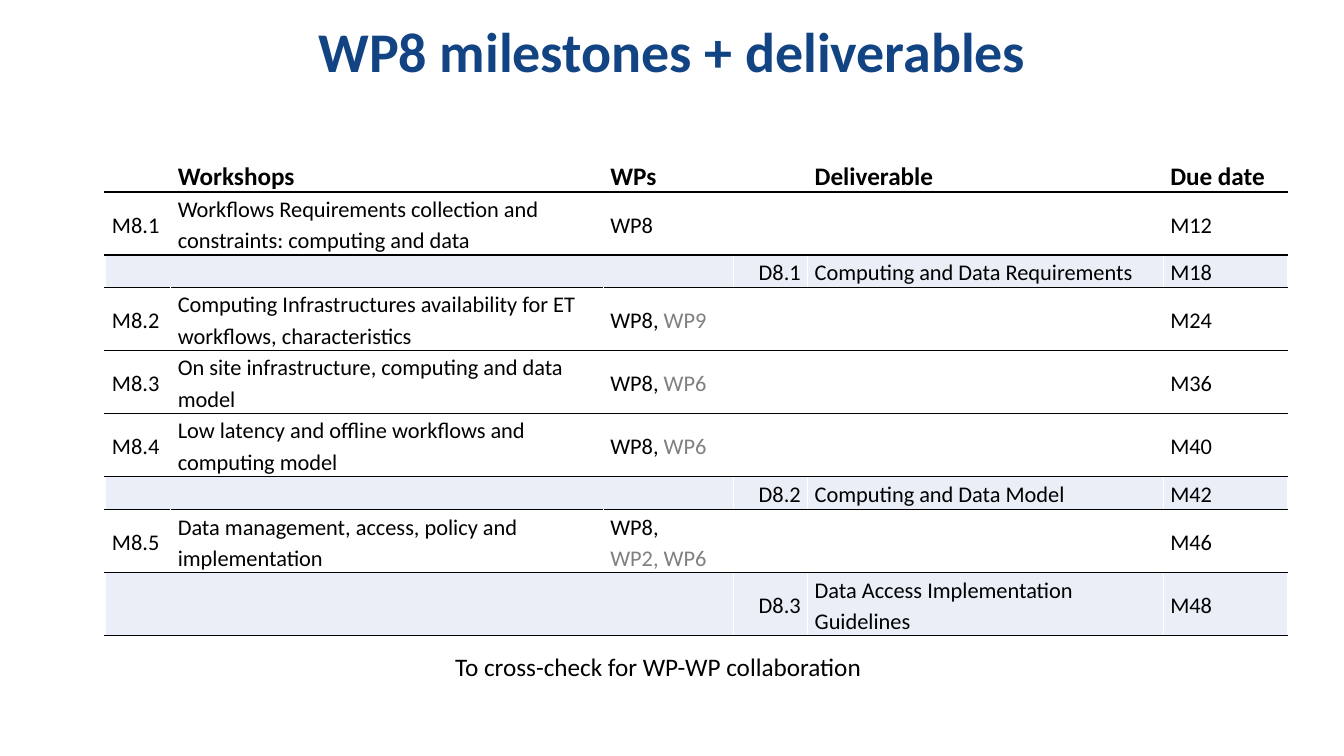
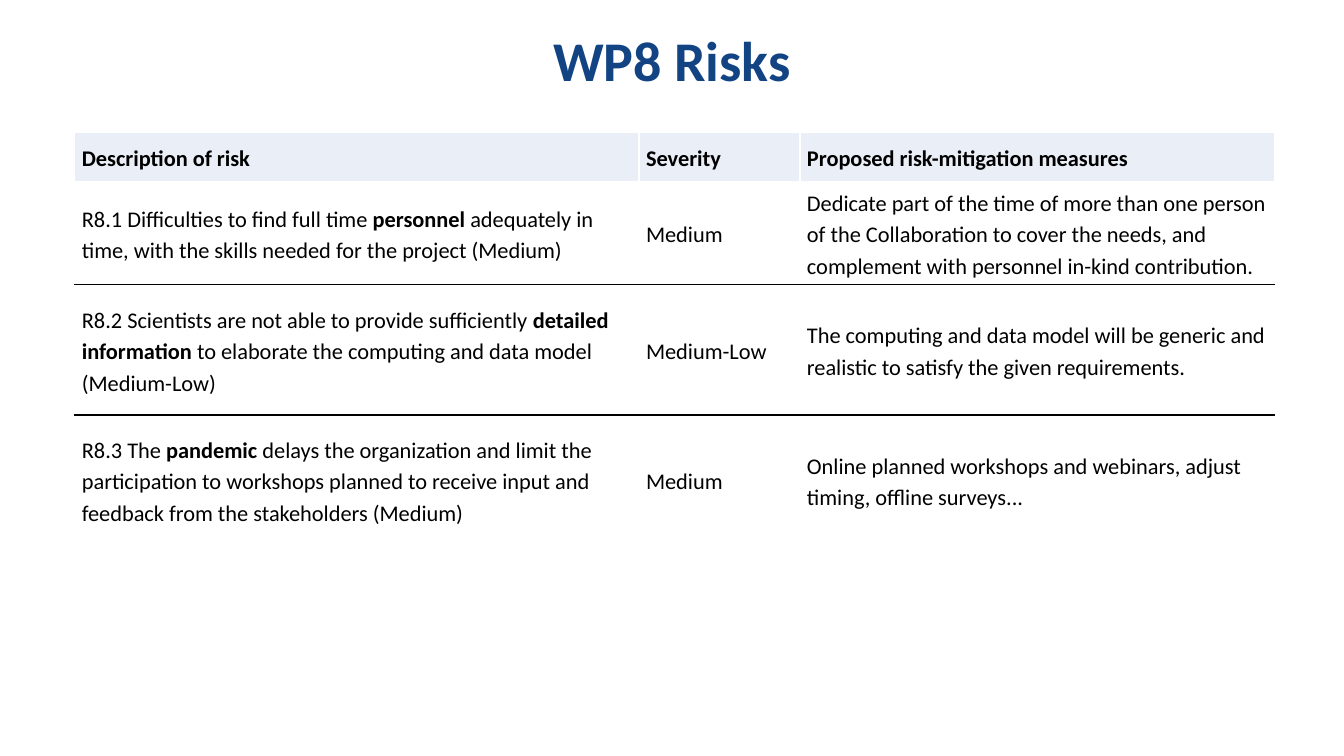
import pptx
import pptx.util
import pptx.oxml
import pptx.oxml.ns
import pptx.dml.color
import pptx.enum.text

Pt = pptx.util.Pt
ALIGN = pptx.enum.text.PP_ALIGN
ANCHOR = pptx.enum.text.MSO_ANCHOR
WIDE, HIGH = 960, 540
FONT = "Calibri"
NAVY, BLACK, WHITE, GRAY, PALE = "124484", "000000", "FFFFFF", "808080", "EAEFF7"

TASKS = [
    ["", "Workshops", "WPs", "", "Deliverable", "Due date"],
    ["M8.1", "Workflows Requirements collection and constraints: computing and data", "WP8", "", "", "M12"],
    ["", "", "", "D8.1", "Computing and Data Requirements", "M18"],
    ["M8.2", "Computing Infrastructures availability for ET workflows, characteristics", "WP8, |WP9", "", "", "M24"],
    ["M8.3", "On site infrastructure, computing and data model", "WP8, |WP6", "", "", "M36"],
    ["M8.4", "Low latency and offline workflows and computing model", "WP8, |WP6", "", "", "M40"],
    ["", "", "", "D8.2", "Computing and Data Model", "M42"],
    ["M8.5", "Data management, access, policy and implementation", "WP8,\n|WP2, WP6", "", "", "M46"],
    ["", "", "", "D8.3", "Data Access Implementation Guidelines", "M48"],
]
RISKS = [
    ["Description of risk", "Severity", "Proposed risk-mitigation measures"],
    ["R8.1 Difficulties to find full time |personnel| adequately in time, with the skills needed for the project (Medium)",
     "Medium",
     "Dedicate part of the time of more than one person of the Collaboration to cover the needs, and complement with personnel in-kind contribution."],
    ["R8.2 Scientists are not able to provide sufficiently |detailed information| to elaborate the computing and data model (Medium-Low)",
     "Medium-Low",
     "The computing and data model will be generic and realistic to satisfy the given requirements."],
    ["R8.3 The |pandemic| delays the organization and limit the participation to workshops planned to receive input and feedback from the stakeholders (Medium)",
     "Medium",
     "Online planned workshops and webinars, adjust timing, offline surveys..."],
]


def tint(code):
    return pptx.dml.color.RGBColor.from_string(code)


def apply(item, form):
    for key, value in form.items():
        setattr(item, key, value)


class Deck:
    cell_form = dict(margin_left=Pt(5), margin_right=Pt(5), margin_top=0,
                     margin_bottom=0, vertical_anchor=ANCHOR.MIDDLE)

    def __init__(self):
        self.show = pptx.Presentation()
        apply(self.show, dict(slide_width=Pt(WIDE), slide_height=Pt(HIGH)))
        self.slide = None

    def page(self, title, top):
        self.slide = self.show.slides.add_slide(self.show.slide_layouts[6])
        self.text(title, (0, top, WIDE, 63), dict(size=40, bold=True, color=NAVY),
                  dict(alignment=ALIGN.CENTER, line_spacing=0.9))

    def add_run(self, para, text, size, bold=False, color=BLACK):
        run = para.add_run()
        run.text = text
        apply(run.font, dict(name=FONT, size=Pt(size), bold=bold))
        run.font.color.rgb = tint(color)

    def fill_text(self, frame, text, look, lines, accent=None):
        for row, line in enumerate(text.split("\n")):
            para = frame.add_paragraph() if row else frame.paragraphs[0]
            apply(para, lines)
            for turn, part in enumerate(line.split("|")):
                if part:
                    extra = accent if turn % 2 else {}
                    self.add_run(para, part, **{**look, **extra})

    def text(self, text, place, look, lines, wrap=True):
        box = self.slide.shapes.add_textbox(*map(Pt, place))
        box.text_frame.word_wrap = wrap
        self.fill_text(box.text_frame, text, look, lines)

    def edge(self, cell, side, color):
        line = pptx.oxml.parse_xml(
            f'<a:ln{side} {pptx.oxml.ns.nsdecls("a")} w="12700"><a:solidFill>'
            f'<a:srgbClr val="{color}"/></a:solidFill></a:ln{side}>')
        cell._tc.get_or_add_tcPr().append(line)

    def table(self, data, left, top, cols, rows, head, accent, bands, rules, right=()):
        grid = self.slide.shapes.add_table(
            len(rows), len(cols), Pt(left), Pt(top), Pt(sum(cols)), Pt(sum(rows))).table
        apply(grid, dict(first_row=False, horz_banding=False))
        for col, width in zip(grid.columns, cols):
            col.width = Pt(width)
        for r, (high, words) in enumerate(zip(rows, data)):
            grid.rows[r].height = Pt(high)
            look = dict(size=16, bold=False) if r else dict(size=head, bold=True)
            for c, text in enumerate(words):
                cell = grid.cell(r, c)
                apply(cell, self.cell_form)
                side = ALIGN.RIGHT if c in right else ALIGN.LEFT
                self.fill_text(cell.text_frame, text, look,
                               dict(alignment=side, line_spacing=1.15), accent)
                over = BLACK if r - 1 in rules else WHITE
                under = BLACK if r in rules else WHITE
                for name, color in zip("LRTB", (WHITE, WHITE, over, under)):
                    self.edge(cell, name, color)
                cell.fill.solid()
                cell.fill.fore_color.rgb = tint(PALE if r in bands else WHITE)
        return grid


def main():
    deck = Deck()

    deck.page("WP8 milestones + deliverables", 13.5)
    bands = (2, 6, 8)
    grid = deck.table(TASKS, 75, 111.5, (47, 309, 93, 53, 254, 89),
                      (25.7, 45, 23, 45, 45, 45, 24, 45, 45),
                      18, dict(color=GRAY), bands, range(9), right=(3,))
    for row in bands:
        grid.cell(row, 0).merge(grid.cell(row, 2))
    deck.text("To cross-check for WP-WP collaboration", (318, 461.5, 307.5, 29),
              dict(size=18), {}, wrap=False)

    deck.page("WP8 Risks", 20)
    deck.table(RISKS, 53.5, 94.5, (403, 115, 339), (35, 74, 93, 93),
               16, dict(bold=True), (0,), (1, 2))

    deck.show.save("out.pptx")


if __name__ == "__main__":
    main()
